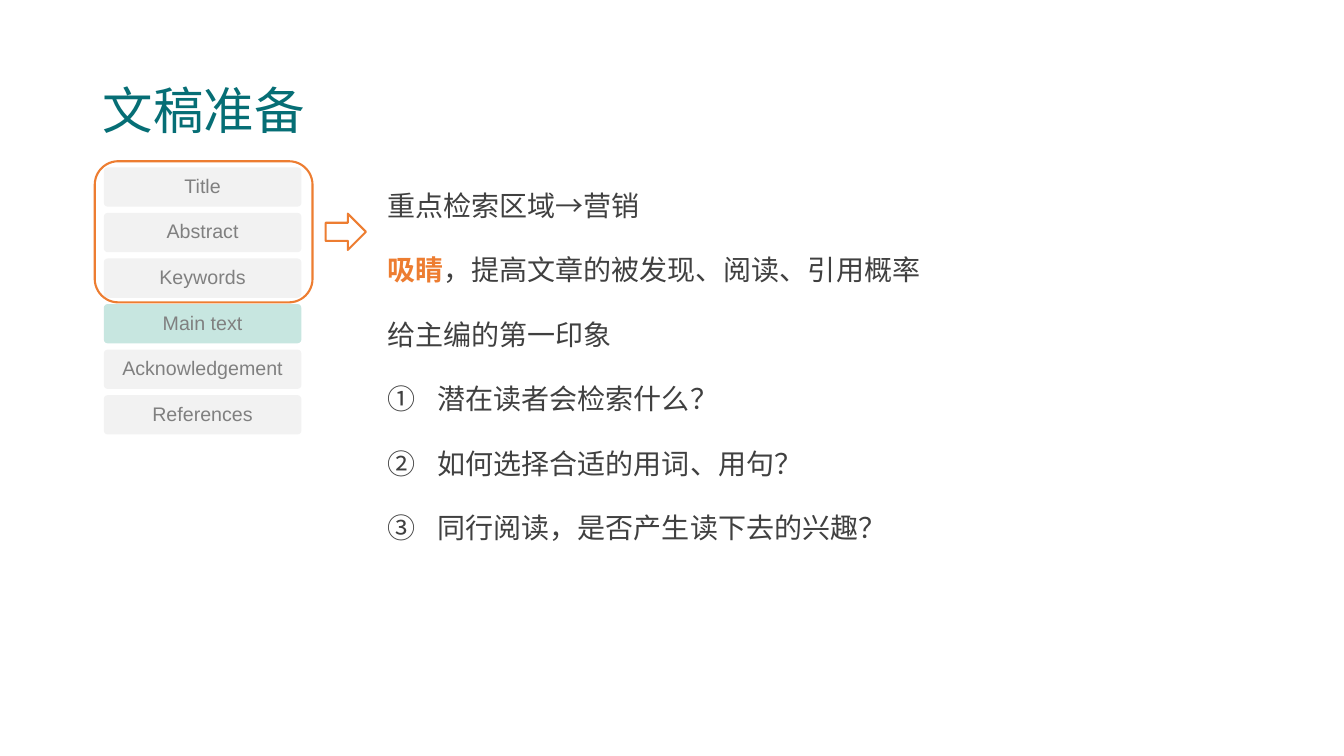
from lxml import etree
from pptx import Presentation
from pptx.dml.color import RGBColor
from pptx.enum.shapes import MSO_SHAPE
from pptx.enum.text import MSO_ANCHOR, MSO_AUTO_SIZE, PP_ALIGN
from pptx.oxml.ns import qn
from pptx.util import Inches, Pt

LEFT, CENTER = PP_ALIGN.LEFT, PP_ALIGN.CENTER
TOP, MIDDLE = MSO_ANCHOR.TOP, MSO_ANCHOR.MIDDLE
FIT = MSO_AUTO_SIZE.TEXT_TO_FIT_SHAPE
ROUNDED, ARROW = MSO_SHAPE.ROUNDED_RECTANGLE, MSO_SHAPE.RIGHT_ARROW

# Content
TITLE = "文稿准备"
SECTIONS = ["Title", "Abstract", "Keywords", "Main text", "Acknowledgement", "References"]
CURRENT = "Main text"
POINTS = [  # highlighted start, rest of the line, numbered
    ("", "重点检索区域→营销", False),
    ("吸睛", "，提高文章的被发现、阅读、引用概率", False),
    ("", "给主编的第一印象", False),
    ("", "潜在读者会检索什么？", True),
    ("", "如何选择合适的用词、用句？", True),
    ("", "同行阅读，是否产生读下去的兴趣？", True),
]

# Layout in inches
TITLE_BOX = (0.92, 0.4, 11.5, 1.45)
POINTS_BOX = (3.74, 1.65, 8.19, 3.85)
FRAME_BOX = (0.94, 1.6, 2.16, 1.4)
ARROW_BOX = (3.23, 2.12, 0.4, 0.36)
LIST_LEFT, LIST_TOP, ROW_WIDTH, ROW_HEIGHT = 1.03, 1.66, 1.96, 0.39
ROW_PITCH = 2.26 / (len(SECTIONS) - 1)

TEAL, MINT, ORANGE = "066E75", "C7E6E0", "ED7D31"
PALE, GREY, DARK = "F2F2F2", "808080", "404040"
CJK_FONT = "Noto Sans CJK SC"


def color(value):
    return RGBColor.from_string(value)


def place(shape, box):
    shape.left, shape.top, shape.width, shape.height = map(Inches, box)


def style(font, size, name, value):
    font.size, font.name = Pt(size), name
    font.color.rgb = color(value)
    etree.SubElement(font._rPr, qn("a:ea"), typeface=CJK_FONT)


def add_box(page, kind, box, fill=None, line=None):
    shape = page.shapes.add_shape(kind, *map(Inches, box))
    shape.shadow.inherit = False
    if fill:
        shape.fill.solid()
        shape.fill.fore_color.rgb = color(fill)
    else:
        shape.fill.background()
    if line:
        shape.line.color.rgb = color(line)
        shape.line.width = Pt(1.5)
    else:
        shape.line.fill.background()
    return shape


def set_bullet(para, numbered):
    properties = para._p.get_or_add_pPr()
    indent = Inches(0.5) if numbered else 0
    properties.set("marL", str(indent))
    properties.set("indent", str(-indent))
    if numbered:
        etree.SubElement(properties, qn("a:buFont"), typeface="+mj-lt")
        etree.SubElement(properties, qn("a:buAutoNum"), type="circleNumDbPlain")
    else:
        etree.SubElement(properties, qn("a:buNone"))


deck = Presentation()
deck.slide_width, deck.slide_height = Inches(13.33), Inches(7.5)
page = deck.slides.add_slide(deck.slide_layouts[1])
title, body = page.placeholders

# Title
place(title, TITLE_BOX)
title.text_frame.text = TITLE
title.text_frame.vertical_anchor = MIDDLE
para = title.text_frame.paragraphs[0]
para.alignment, para.line_spacing = LEFT, 0.9
style(para.font, 36, "Arial", TEAL)

# Points
place(body, POINTS_BOX)
frame = body.text_frame
frame.vertical_anchor, frame.auto_size = TOP, FIT
for index, (highlight, rest, numbered) in enumerate(POINTS):
    para = frame.add_paragraph() if index else frame.paragraphs[0]
    para.line_spacing = 1.5
    para.space_before = Pt(10 if index else 0)
    set_bullet(para, numbered)
    style(para.font, 20, CJK_FONT, DARK)
    if highlight:
        span = para.add_run()
        span.text, span.font.bold = highlight, True
        span.font.color.rgb = color(ORANGE)
    para.add_run().text = rest

# Manuscript sections
for row, name in enumerate(SECTIONS):
    box = (LIST_LEFT, LIST_TOP + row * ROW_PITCH, ROW_WIDTH, ROW_HEIGHT)
    section = add_box(page, ROUNDED, box, fill=MINT if name == CURRENT else PALE)
    section.adjustments[0] = 0.1
    frame = section.text_frame
    frame.margin_left = frame.margin_right = Inches(0.02)
    frame.margin_top = frame.margin_bottom = Inches(0.02)
    frame.vertical_anchor, frame.word_wrap = MIDDLE, True
    frame.text = name
    para = frame.paragraphs[0]
    para.alignment, para.line_spacing = CENTER, 0.9
    style(para.font, 14, "Arial", GREY)

# Frame around the searchable sections, with its arrow
add_box(page, ROUNDED, FRAME_BOX, line=ORANGE)
add_box(page, ARROW, ARROW_BOX, line=ORANGE)

deck.save("out.pptx")
